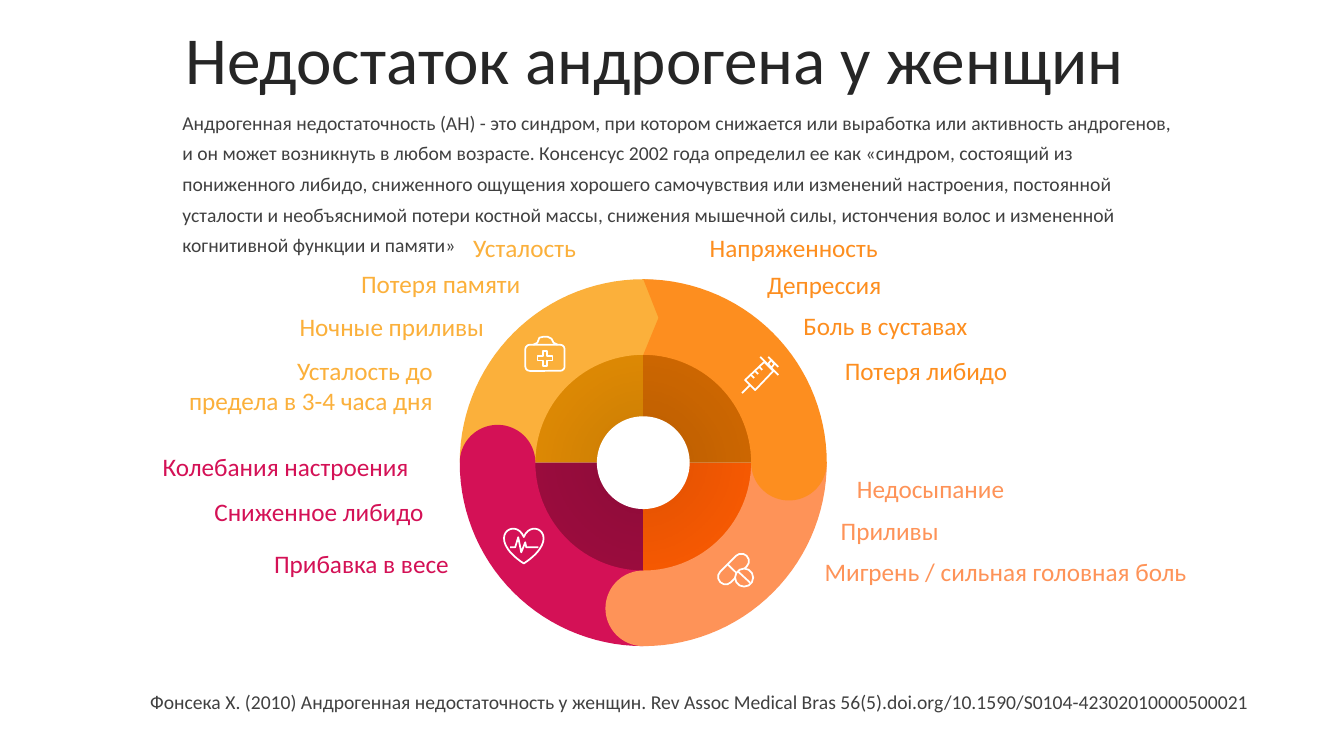
import math

import pptx
import pptx.dml.color
import pptx.enum.shapes
import pptx.enum.text
import pptx.oxml
import pptx.oxml.ns
import pptx.util
from pptx.util import Inches

COLORS = {
    "title": "262626", "text": "404040", "white": "FFFFFF", "black": "000000",
    "yellow": "FBB03B", "crimson": "D41156", "peach": "FE9358", "orange": "FD8E1F",
    "dark yellow": "E48D05", "dark crimson": "9F0D40",
    "dark peach": "FD5C03", "dark orange": "D36A02",
}
FONT = "Calibri"
TITLE = "Недостаток андрогена у женщин"
DEFINITION = (
    "Андрогенная недостаточность (АН) - это синдром, при котором снижается или выработка "
    "или активность андрогенов, и он может возникнуть в любом возрасте. Консенсус 2002 года "
    "определил ее как «синдром, состоящий из пониженного либидо, сниженного ощущения хорошего "
    "самочувствия или изменений настроения, постоянной усталости и необъяснимой потери костной "
    "массы, снижения мышечной силы, истончения волос и измененной когнитивной функции и памяти»"
)
CITATION = (
    "Фонсека Х. (2010) Андрогенная недостаточность у женщин. "
    "Rev Assoc Medical Bras 56(5).doi.org/10.1590/S0104-42302010000500021"
)
# Right edge and top of each right-aligned label
LEFT_LABELS = {
    "yellow": [(5.81, 2.25, ["Усталость"]), (5.26, 2.61, ["Потеря памяти"]),
               (4.9, 3.04, ["Ночные приливы"]),
               (4.39, 3.47, ["Усталость до", "предела в 3-4 часа дня"])],
    "crimson": [(4.15, 4.43, ["Колебания настроения"]), (4.3, 4.87, ["Сниженное либидо"]),
                (4.55, 5.39, ["Прибавка в весе"])],
}
# Left edge and top of each left-aligned label
RIGHT_LABELS = {
    "orange": [(6.94, 2.25, ["Напряженность"]), (7.51, 2.62, ["Депрессия"]),
               (7.87, 3.03, ["Боль в суставах"]), (8.28, 3.47, ["Потеря либидо"])],
    "peach": [(8.4, 4.64, ["Недосыпание"]), (8.24, 5.06, ["Приливы"]),
              (8.08, 5.47, ["Мигрень / сильная головная боль"])],
}
LABEL_WIDTH = 3.88

# Quarters from back to front: colour and start angle, clockwise from the right
QUARTERS = [("yellow", 180), ("crimson", 90), ("peach", 0), ("orange", 270)]
CENTER = (6.38, 4.59)
OUTER, INNER, CORE, HOLE = 1.82, 1.07, 1.13, 0.46
NOTCH_ANGLE = 6

KIT_HANDLE = [(5.29, 3.42), (5.33, 3.4), (5.35, 3.35), (5.39, 3.34),
              (5.43, 3.34), (5.47, 3.36), (5.49, 3.4), (5.53, 3.42)]
SYRINGE_BARREL = [(7.39, 3.77), (7.58, 3.59), (7.67, 3.68), (7.49, 3.87)]
SYRINGE_PLUNGER = [(7.62, 3.61), (7.65, 3.57), (7.68, 3.61), (7.65, 3.65)]
SYRINGE_LINES = [
    ((7.36, 3.9), (7.44, 3.82)), ((7.54, 3.54), (7.72, 3.72)), ((7.62, 3.54), (7.72, 3.64)),
] + [((7.45 + step, 3.72 - step), (7.48 + step, 3.75 - step)) for step in (0, 0.04, 0.08)]
PULSE = [(5.06, 5.43), (5.11, 5.43), (5.14, 5.33), (5.17, 5.48),
         (5.21, 5.38), (5.22, 5.43), (5.34, 5.43)]
PILL_LINES = [((7.22, 5.6), (7.3, 5.68)), ((7.32, 5.67), (7.44, 5.78))]

SHAPE = pptx.enum.shapes.MSO_SHAPE
ALIGN = pptx.enum.text.PP_ALIGN
ANCHOR = pptx.enum.text.MSO_ANCHOR

presentation = pptx.Presentation()
presentation.slide_width, presentation.slide_height = Inches(13.33), Inches(7.5)
slide = presentation.slides.add_slide(presentation.slide_layouts[5])


def rgb(color):
    return pptx.dml.color.RGBColor.from_string(COLORS[color])


def write(shape, box, lines, size, color, align=ALIGN.LEFT, spacing=1.0, anchor=ANCHOR.TOP):
    shape.left, shape.top, shape.width, shape.height = map(Inches, box)
    frame = shape.text_frame
    frame.word_wrap = True
    frame.vertical_anchor = anchor
    for index, line in enumerate(lines):
        paragraph = frame.add_paragraph() if index else frame.paragraphs[0]
        paragraph.alignment = align
        paragraph.line_spacing = spacing
        run = paragraph.add_run()
        run.text = line
        run.font.name, run.font.size = FONT, pptx.util.Pt(size)
        run.font.color.rgb = rgb(color)


def add_text(box, *args, **options):
    write(slide.shapes.add_textbox(0, 0, 0, 0), box, *args, **options)


def paint(shape, fill=None, outlined=False):
    shape.shadow.inherit = False
    if fill:
        shape.fill.solid()
        shape.fill.fore_color.rgb = rgb(fill)
    else:
        shape.fill.background()
    if outlined:
        shape.line.color.rgb = rgb("white")
        shape.line.width = pptx.util.Pt(1.25)
    else:
        shape.line.fill.background()
    return shape


def add_preset(kind, box, fill=None, outlined=True):
    return paint(slide.shapes.add_shape(kind, *map(Inches, box)), fill, outlined)


def add_outline(points, fill=None, outlined=False, close=True):
    points = [(Inches(x), Inches(y)) for x, y in points]
    builder = slide.shapes.build_freeform(*points[0])
    builder.add_line_segments(points[1:], close=close)
    return paint(builder.convert_to_shape(), fill, outlined)


def add_line(start, end):
    line = slide.shapes.add_connector(
        pptx.enum.shapes.MSO_CONNECTOR.STRAIGHT, *map(Inches, start + end))
    line.line.color.rgb = rgb("white")
    line.line.width = pptx.util.Pt(1.25)
    line._element.spPr.append(pptx.oxml.parse_xml(
        f'<a:effectLst {pptx.oxml.ns.nsdecls("a")}/>'))


def arc(center, radius, start, end):
    """Points along an arc, one every 3 degrees."""
    count = abs(end - start) // 3
    angles = [math.radians(start + (end - start) * i / count) for i in range(count + 1)]
    return [(center[0] + radius * math.cos(a), center[1] + radius * math.sin(a)) for a in angles]


def add_ring_quarter(color, start):
    """Quarter of the ring with a round leading end and a notched trailing end."""
    end = start + 90
    middle, cap_radius = (OUTER + INNER) / 2, (OUTER - INNER) / 2
    cap_center = arc(CENTER, middle, end, end + 3)[0]
    notch = arc(CENTER, middle, start + NOTCH_ANGLE, start + NOTCH_ANGLE + 3)[0]
    add_outline(arc(CENTER, OUTER, start, end) + arc(cap_center, cap_radius, end, end + 180)
                + arc(CENTER, INNER, end, start) + [notch], color)


def add_hole():
    hole = add_preset(SHAPE.OVAL, (CENTER[0] - HOLE, CENTER[1] - HOLE, 2 * HOLE, 2 * HOLE),
                      "white", outlined=False)
    effects = hole._element.spPr.find(pptx.oxml.ns.qn("a:effectLst"))
    effects.append(pptx.oxml.parse_xml(
        f'<a:outerShdw {pptx.oxml.ns.nsdecls("a")} blurRad="{pptx.util.Pt(100)}" dist="0" '
        f'dir="0" algn="ctr" rotWithShape="0"><a:srgbClr val="{COLORS["black"]}">'
        '<a:alpha val="40000"/></a:srgbClr></a:outerShdw>'))


def add_icons():
    add_preset(SHAPE.ROUNDED_RECTANGLE, (5.21, 3.42, 0.39, 0.26))
    add_outline(KIT_HANDLE, outlined=True, close=False)
    add_preset(SHAPE.CROSS, (5.33, 3.48, 0.15, 0.15)).adjustments[0] = 0.35

    add_outline(SYRINGE_BARREL, outlined=True)
    add_outline(SYRINGE_PLUNGER, outlined=True)

    add_preset(SHAPE.HEART, (5.0, 5.24, 0.39, 0.35))
    add_outline(PULSE, outlined=True, close=False)

    capsule = add_preset(SHAPE.ROUNDED_RECTANGLE, (7.09, 5.57, 0.37, 0.15))
    capsule.adjustments[0] = 0.5
    capsule.rotation = -45
    add_preset(SHAPE.OVAL, (7.29, 5.64, 0.18, 0.18), "peach")
    for start, end in SYRINGE_LINES + PILL_LINES:
        add_line(start, end)


write(slide.shapes.title, (1.65, 0.21, 9.69, 0.83), [TITLE], 48, "title", ALIGN.CENTER, 0.9)
add_text((1.71, 0.98, 10.09, 1.61), [DEFINITION], 14, "text", spacing=1.3)

for color, start in QUARTERS:
    add_outline([CENTER] + arc(CENTER, CORE, start, start + 90), "dark " + color)
add_hole()
for color, start in QUARTERS:
    add_ring_quarter(color, start)
add_icons()

for groups, align in ((LEFT_LABELS, ALIGN.RIGHT), (RIGHT_LABELS, ALIGN.LEFT)):
    for color, labels in groups.items():
        for edge, top, lines in labels:
            left = edge - LABEL_WIDTH if align == ALIGN.RIGHT else edge
            height = 0.1 + 0.3 * len(lines)
            add_text((left, top, LABEL_WIDTH, height), lines, 18, color, align,
                     anchor=ANCHOR.BOTTOM)

add_text((1.39, 6.73, 11.65, 0.38), [CITATION], 14, "text", spacing=1.3)
presentation.save("out.pptx")
